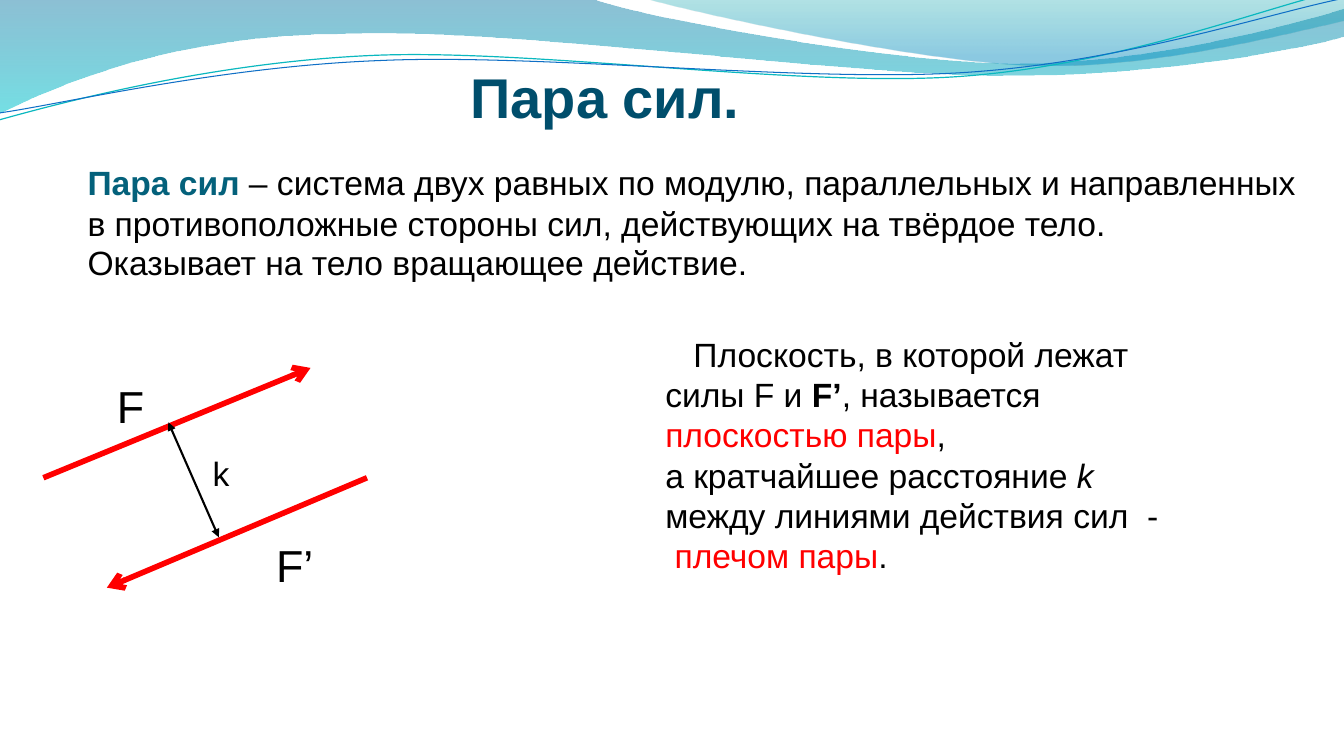
import math

import pptx
import pptx.dml.color
import pptx.enum.shapes
import pptx.enum.text
import pptx.oxml.ns
import pptx.util
from lxml import etree

RGB = pptx.dml.color.RGBColor
Inches, Pt, qn = pptx.util.Inches, pptx.util.Pt, pptx.oxml.ns.qn

BLACK = RGB(0x00, 0x00, 0x00)
RED = RGB(0xFF, 0x00, 0x00)
NAVY = RGB(0x00, 0x4E, 0x6C)
TERM_TEAL = RGB(0x04, 0x61, 0x7B)
WAVE_BLUE = RGB(0x00, 0x74, 0xA1)
WAVE_CYAN = RGB(0x00, 0xC6, 0xCF)
CREST_TEAL = RGB(0x00, 0xA1, 0xA9)
CREST_BLUE = RGB(0x00, 0x8B, 0xBF)
LINE_TEAL = RGB(0x0A, 0xB8, 0xBF)
LINE_BLUE = RGB(0x0F, 0x6F, 0xC6)
NBSP = chr(160)

deck = pptx.Presentation()
deck.slide_width, deck.slide_height = Inches(13.33), Inches(7.5)
slide = deck.slides.add_slide(deck.slide_layouts[5])
shapes = slide.shapes


def add_curve(start, segments, closed):
    """Draw an outline: one point is a straight step, three points are a Bézier curve."""
    # Points are given in thousandths of an inch
    outline = shapes.build_freeform(start[0] * 1000, start[1] * 1000, scale=914.4)
    outline.add_line_segments([(x * 1000, y * 1000) for segment in segments
                               for x, y in segment], close=closed)
    curve = outline.convert_to_shape()
    curve.shadow.inherit = False
    # Gather each run of three straight steps into one curve
    steps = iter(list(curve.element.spPr.iter(qn("a:lnTo"))))
    for segment in segments:
        first, *others = [next(steps) for _ in segment]
        if others:
            first.tag = qn("a:cubicBezTo")
            for step in others:
                first.append(step[0])
                step.getparent().remove(step)
    return curve


def add_text(left, top, width, height, size, paragraphs):
    """Each paragraph is a list of (text, font settings) runs."""
    box = shapes.add_textbox(Inches(left), Inches(top), Inches(width), Inches(height))
    frame = box.text_frame
    frame.word_wrap = True
    frame.auto_size = pptx.enum.text.MSO_AUTO_SIZE.SHAPE_TO_FIT_TEXT
    for number, runs in enumerate(paragraphs):
        paragraph = frame.add_paragraph() if number else frame.paragraphs[0]
        paragraph.font.name, paragraph.font.size = "Arial", Pt(size)
        paragraph.font.color.rgb = BLACK
        for text, settings in runs:
            run = paragraph.add_run()
            run.text = text
            for name, value in settings.items():
                if name == "color":
                    run.font.color.rgb = value
                else:
                    setattr(run.font, name, value)
    return frame


# Waves across the top: start, segments, gradient stops (position, colour, opacity %)
waves = [
    ((0, -0.01),
     [[(5.87, -0.01)], [(6.34, 0.17), (8.85, 0.63), (10.11, 0.63)],
      [(11.38, 0.63), (12.78, 0.26), (13.33, 0.09)], [(13.35, 0.36)],
      [(13.11, 0.44), (11.6, 0.76), (9.94, 0.75)], [(8.29, 0.75), (5.09, 0.28), (3.43, 0.34)],
      [(1.72, 0.35), (0.61, 0.83), (-0.01, 1.13)]],
     [(0, WAVE_BLUE, 45), (1, WAVE_CYAN, 55)]),
    ((6.39, -0.01),
     [[(6.79, 0.11), (9.09, 0.62), (10.25, 0.65)],
      [(11.41, 0.69), (12.82, 0.32), (13.33, 0.21)], [(13.33, 0)]],
     [(0, CREST_TEAL, 30), (0.8, CREST_BLUE, 45)]),
]
for start, segments, stops in waves:
    wave = add_curve(start, segments, closed=True)
    wave.line.fill.background()
    wave.fill.gradient()
    wave.fill.gradient_angle = 270
    for stop, (position, color, opacity) in zip(wave.fill.gradient_stops, stops):
        stop.position, stop.color.rgb = position, color
    tints = list(wave.element.spPr.iter(qn("a:srgbClr")))
    for tint, (_, _, opacity) in zip(tints, stops):
        etree.SubElement(tint, qn("a:alpha"), val=str(opacity * 1000))

# Thin lines along the waves, tilted about a centre: centre, points, colour, weight
TILT = 2.7
cos, sin = math.cos(math.radians(TILT)), math.sin(math.radians(TILT))
ripples = [
    ((6.65, 0.575),
     [(-0.01, 1.19), (0.64, 1.01), (2.11, 0.62), (3.69, 0.55), (5.27, 0.48), (7.9, 0.87),
      (9.5, 0.76), (11.1, 0.65), (12.52, 0.08), (13.31, -0.1)], LINE_TEAL, 0.85),
    ((6.67, 0.59),
     [(0, 1.12), (0.63, 1.03), (2.18, 0.66), (3.78, 0.6), (5.37, 0.53), (7.96, 0.82),
      (9.55, 0.72), (11.15, 0.62), (12.55, 0.14), (13.34, -0.02)], LINE_BLUE, 0.75),
]
for (cx, cy), points, color, weight in ripples:
    level = [(cx + (x - cx) * cos - (y - cy) * sin, cy + (x - cx) * sin + (y - cy) * cos)
             for x, y in points]
    ripple = add_curve(level[0], [level[i:i + 3] for i in range(1, len(level), 3)], closed=False)
    ripple.rotation = 360 - TILT
    ripple.fill.background()
    ripple.line.color.rgb, ripple.line.width = color, Pt(weight)

# Title, in front of the waves
title = shapes.title
shapes.element.append(title.element)
title.left, title.top = Inches(0), Inches(0.68)
title.width, title.height = Inches(12), Inches(0.61)
heading = title.text_frame
heading.text = "Пара сил."
heading.auto_size = pptx.enum.text.MSO_AUTO_SIZE.NONE
heading.vertical_anchor = pptx.enum.text.MSO_ANCHOR.BOTTOM
heading.margin_left = heading.margin_right = heading.margin_bottom = 0
heading.margin_top = Inches(0.05)
heading_line = heading.paragraphs[0]
heading_line.alignment = pptx.enum.text.PP_ALIGN.CENTER
heading_line.font.name, heading_line.font.size = "Arial", Pt(40)
heading_line.font.bold, heading_line.font.color.rgb = True, NAVY

# Force pair and its arm: from, to, colour, weight, arrowheads
arrows = [
    ((0.43, 4.74), (3.08, 3.65), RED, 4, {"tailEnd": "arrow"}),
    ((3.64, 4.74), (1.06, 5.83), RED, 4, {"tailEnd": "arrow"}),
    ((1.67, 4.19), (2.17, 5.33), BLACK, 1.5, {"headEnd": "triangle", "tailEnd": "triangle"}),
]
for begin, end, color, weight, heads in arrows:
    arrow = shapes.add_connector(pptx.enum.shapes.MSO_CONNECTOR.STRAIGHT,
                                 *map(Inches, begin + end))
    arrow.line.color.rgb, arrow.line.width = color, Pt(weight)
    for tag, kind in heads.items():
        etree.SubElement(arrow.element.spPr.find(qn("a:ln")), qn("a:" + tag), type=kind)
    etree.SubElement(arrow.element.spPr, qn("a:effectLst"))

# Diagram labels
for left, top, width, height, size, label in [
    (1.06, 3.71, 0.48, 0.64, 32, "F"),
    (2.64, 5.29, 0.69, 0.64, 32, "F’"),
    (2.01, 4.44, 0.29, 0.5, 24, "k"),
]:
    add_text(left, top, width, height, size, [[(label, {})]])

# Definition
add_text(0.77, 1.56, 12.22, 0.91, 24, [[
    ("Пара сил", {"bold": True, "color": TERM_TEAL}),
    (" – система двух равных по модулю, параллельных и направленных "
     "в противоположные стороны сил, действующих на твёрдое тело.", {}),
]])
add_text(0.77, 2.35, 6.81, 0.5, 24, [[("Оказывает на тело вращающее действие.", {})]])

# Plane and arm of the pair
plane = add_text(6.5, 2.96, 5.2, 3.13, 24, [
    [(f"Плоскость, в которой лежат силы{NBSP}F{NBSP}и ", {}), ("F’", {"bold": True}),
     (", называется ", {}), ("плоскостью пары", {"color": RED}), (",", {})],
    [("а кратчайшее расстояние ", {}), ("k ", {"italic": True}),
     (f"между линиями действия сил{NBSP}{NBSP}-", {}),
     (f"{NBSP}плечом пары", {"color": RED}), (".", {})],
])
plane.margin_top = Inches(0.35)
plane.paragraphs[0]._p.get_or_add_pPr().set("indent", str(Inches(0.28)))

deck.save("out.pptx")
